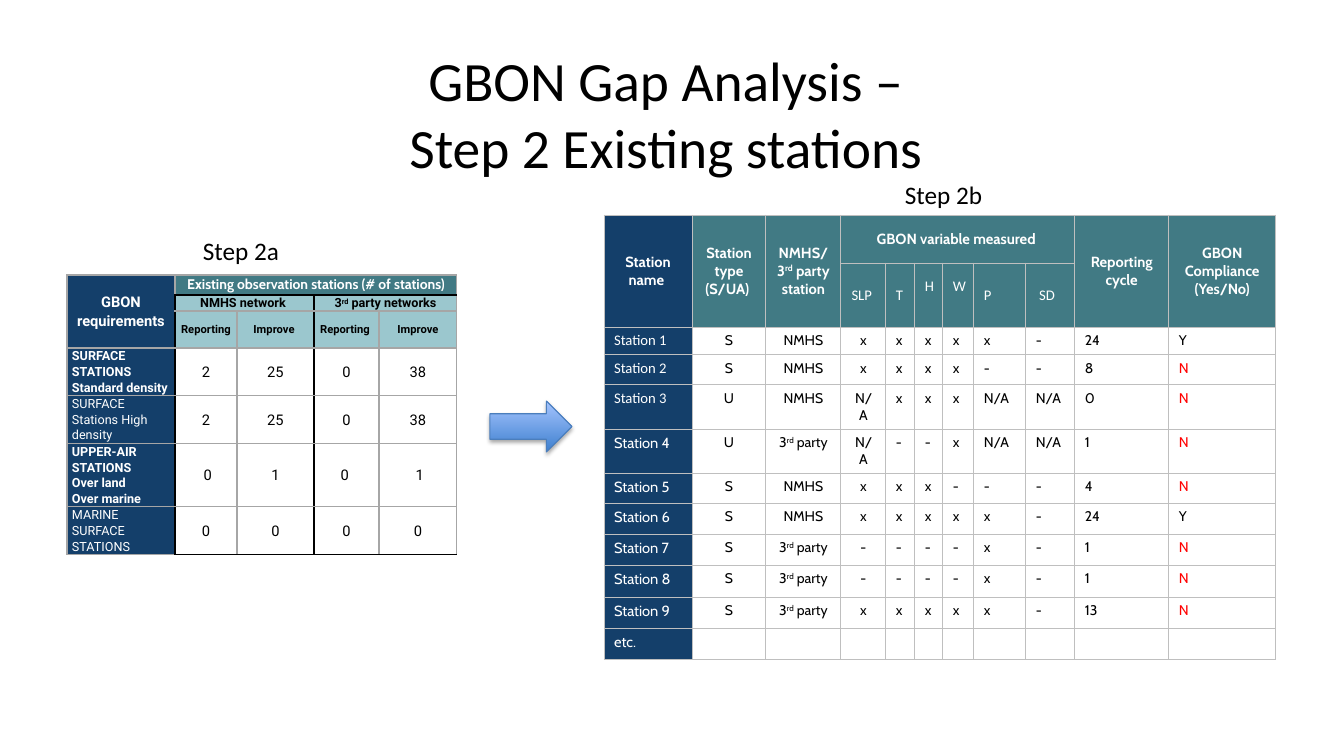
"""Build the GBON gap analysis slide on existing stations."""
from lxml import etree
from pptx import Presentation
from pptx import util as u
from pptx.dml.color import RGBColor
from pptx.enum import shapes, text
from pptx.oxml import ns

HUES = {"navy": "143F6A", "teal": "417A84", "pale": "9BC7CE", "white": "FFFFFF",
        "black": "000000", "red": "FF0000", "rule": "BFBFBF", "grey": "A6A6A6",
        "deep": "3F80CE", "light": "A4C4FF", "edge": "4B7EBC"}
TITLE = "GBON Gap Analysis – \vStep 2 Existing stations "
LABELS = [("Step 2a", 193, 230, 128), ("Step 2b", 895, 174, 172)]

NEEDS = {
    "at": (67, 275),
    "cols": [108, 62, 77, 65, 78],
    "rows": [20, 16, 37, 47, 48, 63, 48],
    "spans": [(0, 0, 2, 0), (0, 1, 0, 4), (1, 1, 1, 2), (1, 3, 1, 4)],
    "cells": [
        ["GBON requirements", "Existing observation stations (# of stations)", "", "", ""],
        ["", "NMHS network ", "", "3^rd^ party networks", ""],
        ["", "Reporting", "Improve ", "Reporting ", "Improve"],
        ["SURFACE STATIONS\nStandard density", "2", "25", "0", "38"],
        ["SURFACE Stations High density", "2", "25", "0", "38"],
        ["UPPER-AIR STATIONS\nOver land\nOver marine", " 0", "1", "0 ", " 1"],
        ["MARINE SURFACE STATIONS", "0", "0", "0", "0"],
    ],
}
SITES = {
    "at": (604, 215),
    "cols": [88, 74, 75, 45, 29, 28, 31, 52, 49, 94, 107],
    "rows": [48, 64, 28, 30, 42, 42, 30, 31, 31, 32, 31, 31],
    "spans": [(0, c, 1, c) for c in (0, 1, 2, 9, 10)] + [(0, 3, 0, 8)],
    "cells": [
        ["Station name ", "Station type (S/UA) ", "NMHS/ 3^rd^ party station",
         "GBON variable measured ", "", "", "", "", "", "Reporting cycle",
         "GBON Compliance (Yes/No)"],
        ["", "", "", "SLP ", "T ", "H ", "W ", "P ", " SD ", "", ""],
        ["Station 1", "S", "NMHS", "x", "x", "x", "x", "x", "-", "24", "Y"],
        ["Station 2", "S", "NMHS", "x", "x", "x", "x", "-", "-", "8", "N"],
        ["Station 3", "U", "NMHS", "N/A", "x", "x", "x", "N/A", "N/A", "0", "N"],
        ["Station 4", "U", "3^rd^ party", "N/A", "-", "-", "x", "N/A", "N/A", "1", "N"],
        ["Station 5", "S", "NMHS", "x", "x", "x", "-", "-", "-", "4", "N"],
        ["Station 6", "S", "NMHS", "x", "x", "x", "x", "x", "-", "24", "Y"],
        ["Station 7", "S", "3^rd^ party", "-", "-", "-", "-", "x", "-", "1", "N"],
        ["Station 8", "S", "3^rd^ party", "-", "-", "-", "-", "x", "-", "1", "N"],
        ["Station 9", "S", "3^rd^ party", "x", "x", "x", "x", "x", "-", "13", "N"],
        ["etc."] + [""] * 10,
    ],
}
MID, TOP = text.MSO_ANCHOR.MIDDLE, text.MSO_ANCHOR.TOP


def px(n):
    return round(n * 914400 / 100.8)


def hue(name):
    return RGBColor.from_string(HUES[name])


def style(para, face, size, tint, bold=False, mid=False):
    para.alignment = text.PP_ALIGN.CENTER if mid else text.PP_ALIGN.LEFT
    font = para.font
    font.name, font.size, font.bold = face, u.Pt(size), bold
    font.color.rgb = hue(tint)


def write(para, line):
    for i, part in enumerate(line.split("^")):
        if part:
            run = para.add_run()
            run.text = part
            if i % 2:
                run.font._element.set("baseline", "30000")


def border(cell, side, tint, width):
    line = etree.Element(ns.qn("a:ln" + side), w=str(u.Pt(width)))
    fill = etree.SubElement(line, ns.qn("a:solidFill"))
    etree.SubElement(fill, ns.qn("a:srgbClr"), val=HUES[tint])
    cell._tc.get_or_add_tcPr().insert("LRTB".index(side), line)


def needs_look(r, c):
    bold = r < 3 or (c == 0 and r in (3, 5))
    if c == 0:
        return "Roboto", 10.5 if r < 3 else 9, "white", bold, r < 3, "navy", MID if r < 3 else TOP
    if r == 0:
        return "Cabin", 10, "white", bold, True, "teal", TOP
    size = {1: 9, 2: 8}.get(r, 10.5)
    return "Roboto", size, "black", bold, True, "pale" if r < 3 else None, MID


def needs_edge(r, c, side):
    dark = {"L": r > 0 and c in (1, 3),
            "R": (r > 0 and c == 2) or (r > 2 and c == 0) or (r == 1 and c == 4),
            "T": r == 1 and c > 0,
            "B": r in (0, 6) and c > 0}
    return ("black" if dark[side] else "grey"), 1


def sites_look(r, c):
    if r < 2:
        face = "Calibri" if r else "Cabin"
        return face, 10.5, "white", r == 0, r == 0 or c == 3, "teal" if c else "navy", MID
    if c == 0:
        return "Calibri" if r < 5 else "Cabin", 10.5, "white", False, False, "navy", TOP
    tint = "red" if SITES["cells"][r][c] == "N" else "black"
    return "Cabin", 10, tint, False, c < 4, None, TOP


def sites_edge(r, c, side):
    return "rule", 0.75


def grid(slide, data, look, edge, tight):
    cols, rows = data["cols"], data["rows"]
    frame = slide.shapes.add_table(len(rows), len(cols), *map(px, data["at"]),
                                   px(sum(cols)), px(sum(rows)))
    table = frame.table
    table.first_row = table.horz_banding = False
    for part, size in zip(list(table.columns), cols):
        part.width = px(size)
    for part, size in zip(list(table.rows), rows):
        part.height = px(size)
    for r, row in enumerate(data["cells"]):
        for c, words in enumerate(row):
            cell = table.cell(r, c)
            *font, fill, cell.vertical_anchor = look(r, c)
            if tight:
                cell.margin_left = cell.margin_right = px(5)
                cell.margin_top = cell.margin_bottom = 0
            if fill:
                cell.fill.solid()
                cell.fill.fore_color.rgb = hue(fill)
            else:
                cell.fill.background()
            for i, line in enumerate(words.split("\n")):
                body = cell.text_frame
                para = body.add_paragraph() if i else body.paragraphs[0]
                write(para, line)
                style(para, *font)
                if tight:
                    para.line_spacing = 1.07
                if not line:
                    etree.SubElement(para._p, ns.qn("a:endParaRPr"), sz=str(int(font[1] * 100)))
            for side in "LRTB":
                border(cell, side, *edge(r, c, side))
    for top, left, low, right in data["spans"]:
        table.cell(top, left).merge(table.cell(low, right))


def arrow(slide):
    shape = slide.shapes.add_shape(shapes.MSO_SHAPE.RIGHT_ARROW, px(490), px(401), px(82), px(51))
    shape.fill.gradient()
    shape.fill.gradient_angle = 90
    for stop, tint in zip(shape.fill.gradient_stops, ("deep", "light")):
        stop.color.rgb = hue(tint)
    shape.line.color.rgb = hue("edge")
    shape.line.width = u.Pt(0.75)
    shape.shadow.inherit = False
    glow = etree.SubElement(shape._element.spPr.find(ns.qn("a:effectLst")), ns.qn("a:outerShdw"),
                            blurRad=str(u.Pt(3.1)), dist=str(u.Pt(1.8)), dir="5400000", rotWithShape="0")
    tint = etree.SubElement(glow, ns.qn("a:srgbClr"), val=HUES["black"])
    etree.SubElement(tint, ns.qn("a:alpha"), val="35000")


def main():
    deck = Presentation()
    deck.slide_width, deck.slide_height = px(1344), px(756)
    slide = deck.slides.add_slide(deck.slide_layouts[5])
    title = slide.shapes.title
    title.left, title.top, title.width, title.height = map(px, (67, 50, 1210, 126))
    title.text_frame.text = TITLE
    title.text_frame.auto_size = text.MSO_AUTO_SIZE.NONE
    title.text_frame.vertical_anchor = MID
    style(title.text_frame.paragraphs[0], "Calibri", 39.6, "black", mid=True)
    grid(slide, SITES, sites_look, sites_edge, False)
    grid(slide, NEEDS, needs_look, needs_edge, True)
    arrow(slide)
    for words, left, top, width in LABELS:
        box = slide.shapes.add_textbox(px(left), px(top), px(width), px(40))
        box.text_frame.word_wrap = True
        box.text_frame.text = words
        style(box.text_frame.paragraphs[0], "Calibri", 18, "black")
    deck.save("out.pptx")


if __name__ == "__main__":
    main()
